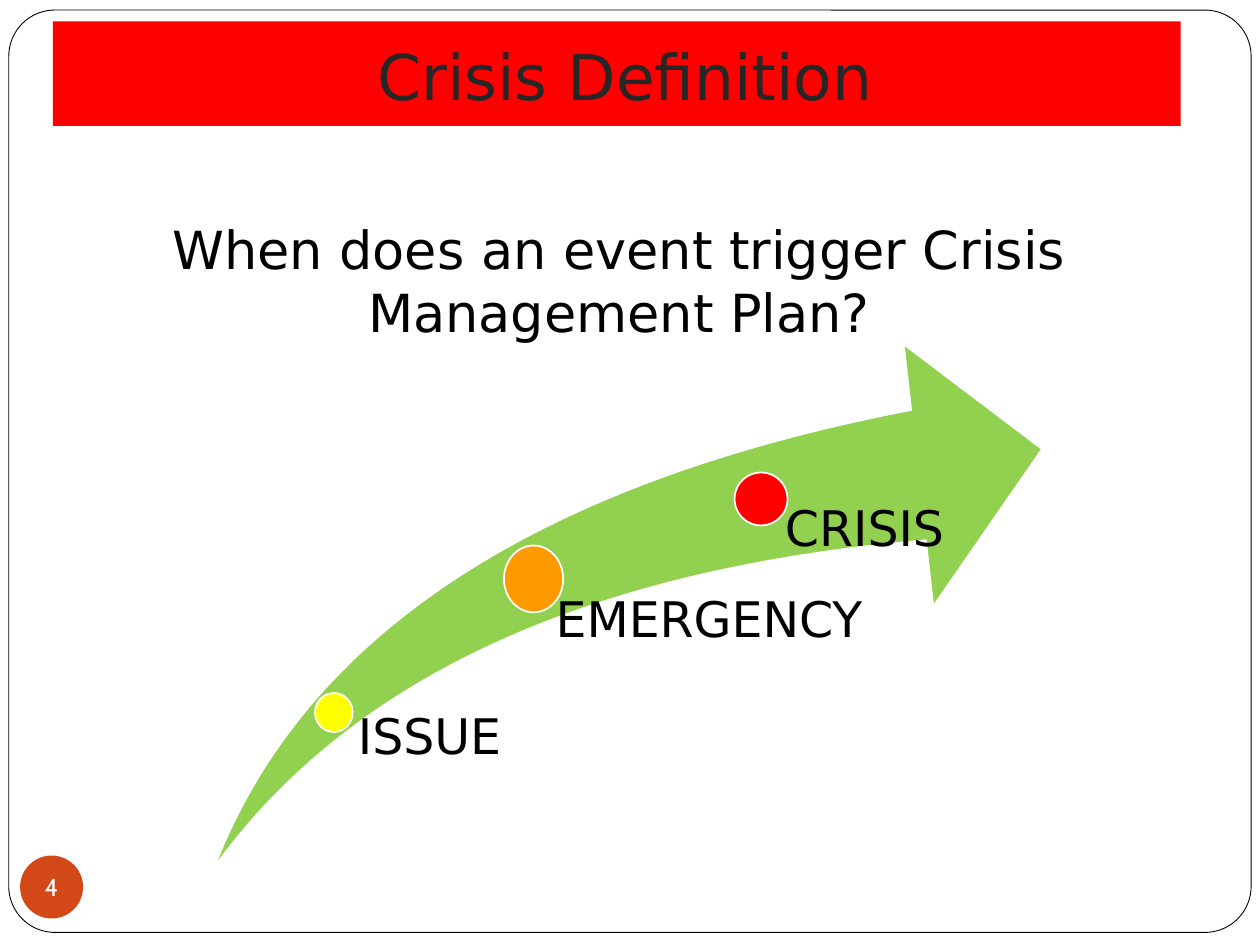
"""Build the Crisis Definition slide with its escalation arrow."""
from pptx import Presentation
from pptx.dml.color import RGBColor
from pptx.enum.shapes import MSO_SHAPE
from pptx.enum.text import MSO_ANCHOR, PP_ALIGN
from pptx.util import Pt

PX = 9144
RECTANGLE, ROUNDED = MSO_SHAPE.RECTANGLE, MSO_SHAPE.ROUNDED_RECTANGLE
OVAL, SWOOSH = MSO_SHAPE.OVAL, MSO_SHAPE.SWOOSH_ARROW
TOP, MIDDLE, BOTTOM = MSO_ANCHOR.TOP, MSO_ANCHOR.MIDDLE, MSO_ANCHOR.BOTTOM
LEFT, CENTER = PP_ALIGN.LEFT, PP_ALIGN.CENTER
COLORS = {
    "white": "FFFFFF", "black": "000000", "title": "262626", "red": "FF0000",
    "green": "92D050", "yellow": "FFFF00", "orange": "FF9900", "badge": "D34817",
}


def add_shape(kind, bounds, fill, line=None, width=1):
    shape = slide.shapes.add_shape(kind, *[value * PX for value in bounds])
    shape.shadow.inherit = False
    shape.fill.solid()
    shape.fill.fore_color.rgb = RGBColor.from_string(COLORS[fill])
    if line:
        shape.line.color.rgb = RGBColor.from_string(COLORS[line])
        shape.line.width = Pt(width)
    else:
        shape.line.fill.background()
    return shape


def write(box, text, size, color="black", align=CENTER, anchor=TOP,
          insets=(10, 5, 10, 5), font="DejaVu Sans", wrap=True):
    frame = box.text_frame
    frame.text = text
    frame.word_wrap = wrap
    frame.vertical_anchor = anchor
    (frame.margin_left, frame.margin_top,
     frame.margin_right, frame.margin_bottom) = [value * PX for value in insets]
    para = frame.paragraphs[0]
    para.alignment = align
    span = para.runs[0]
    span.font.name = font
    span.font.size = Pt(size)
    span.font.color.rgb = RGBColor.from_string(COLORS[color])
    return para


deck = Presentation()
deck.slide_width, deck.slide_height = 1000 * PX, 750 * PX
slide = deck.slides.add_slide(deck.slide_layouts[6])

page_frame = add_shape(ROUNDED, (7, 8, 986, 732), "white", "black", 0.5)
page_frame.adjustments[0] = 0.05

title = add_shape(RECTANGLE, (42, 17, 895, 83), "red")
write(title, "Crisis Definition", 36, "title", anchor=BOTTOM, insets=(23, 5, 10, 10))

question = slide.shapes.add_textbox(58 * PX, 167 * PX, 867 * PX, 481 * PX)
write(question, "When does an event trigger Crisis Management Plan?", 30)

arrow = add_shape(SWOOSH, (173, 275, 653, 408), "green")
arrow.adjustments[0] = 0.25
arrow.adjustments[1] = 0.25

stages = [
    ("ISSUE", "yellow", (250, 550, 30, 31), (275, 565, 152, 118), 9),
    ("EMERGENCY", "orange", (400, 433, 47, 53), (425, 472, 383, 211), 16),
    ("CRISIS", "red", (583, 375, 42, 42), (600, 400, 227, 233), 23),
]
for name, color, dot_bounds, label_bounds, inset in stages:
    add_shape(OVAL, dot_bounds, color, "white")
    label = slide.shapes.add_textbox(*[value * PX for value in label_bounds])
    para = write(label, name, 28, align=LEFT, insets=(inset, 0, 0, 0))
    para.line_spacing = 0.9

badge = add_shape(OVAL, (16, 679, 50, 50), "badge")
write(badge, "4", 14, "white", anchor=MIDDLE, insets=(0, 0, 0, 0),
      font="Cabin", wrap=False)

deck.save("out.pptx")
